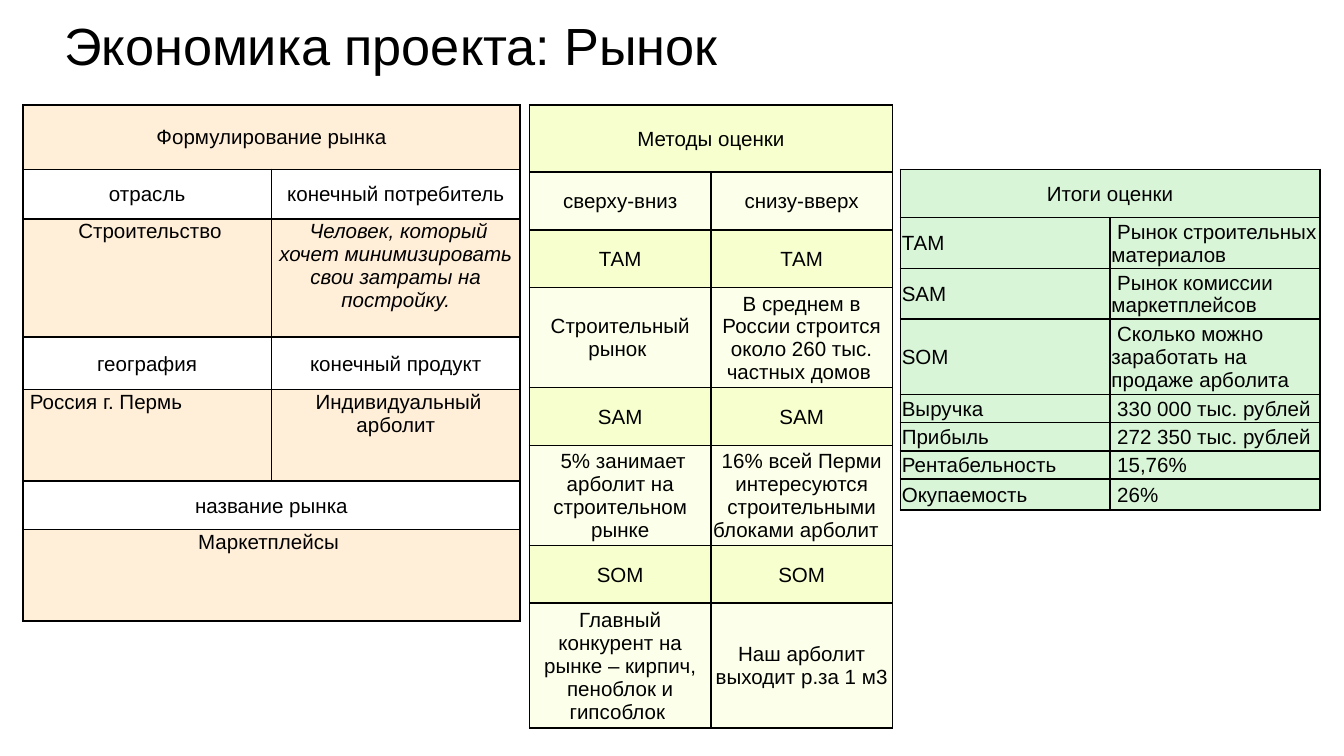
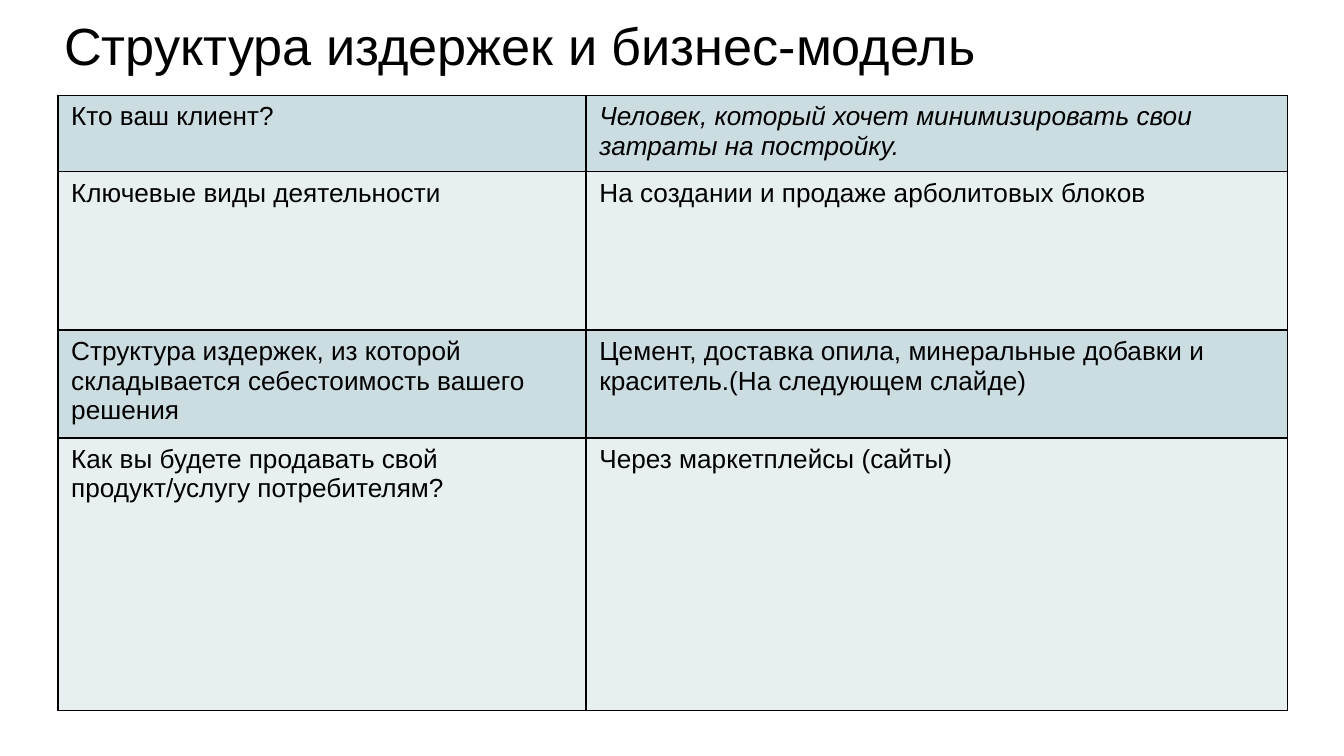
from dataclasses import dataclass
from typing import NamedTuple

from lxml.etree import SubElement
from pptx import Presentation
from pptx.dml.color import RGBColor
from pptx.enum.text import MSO_ANCHOR, PP_ALIGN
from pptx.oxml.ns import qn
from pptx.util import Inches, Pt

FONT = "Arial"
BLACK = RGBColor(0x00, 0x00, 0x00)
ORANGE = RGBColor(0xFF, 0xAB, 0x40)
GREEN = RGBColor(0x33, 0xCC, 0x33)
LEMON = RGBColor(0xF8, 0xFF, 0xCF)
PALE_LEMON = RGBColor(0xFC, 0xFF, 0xE9)
BLUE_GREY = RGBColor(0xCC, 0xDD, 0xE1)
PALE_BLUE_GREY = RGBColor(0xE7, 0xEF, 0xF1)

SLIDE_WIDTH, SLIDE_HEIGHT = Inches(10), Inches(5.625)
GRID_COLUMNS, GRID_ROWS = 100, 56.25
TITLE_SIZE = 28
BORDER_WIDTH = 1
BORDER_TAGS = ("a:lnL", "a:lnR", "a:lnT", "a:lnB")


class Paint(NamedTuple):
    color: RGBColor
    opacity: int = 100


class Margins(NamedTuple):
    left: float
    top: float
    right: float
    bottom: float


class Entry(NamedTuple):
    text: str
    italic: bool = False
    align: PP_ALIGN | None = None


@dataclass(frozen=True)
class Row:
    """A table row; a single entry spans the whole width."""
    height: float
    entries: tuple[Entry | str, ...]
    paint: Paint | None = None
    anchor: MSO_ANCHOR = MSO_ANCHOR.MIDDLE
    align: PP_ALIGN = PP_ALIGN.CENTER


@dataclass(frozen=True)
class Grid:
    left: float
    top: float
    height: float
    columns: tuple[float, ...]
    rows: tuple[Row, ...]
    text_size: float = 11
    margins: Margins = Margins(0.1, 0.1, 0.1, 0)


@dataclass(frozen=True)
class Page:
    title: str
    grids: tuple[Grid, ...]


PEACH = Paint(ORANGE, 20)
MINT = Paint(GREEN, 19)
CLIENT = "Человек, который хочет минимизировать свои затраты на постройку."


def market_answer(height: float, *entries: Entry | str) -> Row:
    return Row(height, entries, PEACH, MSO_ANCHOR.TOP)


def method_heading(name: str) -> Row:
    return Row(4.3, (name, name), Paint(LEMON))


def method_answer(height: float, *entries: str) -> Row:
    return Row(height, entries, Paint(PALE_LEMON))


def result(height: float, name: str, value: str) -> Row:
    return Row(height, (name, value), MINT, align=PP_ALIGN.LEFT)


def model_row(height: float, color: RGBColor, question: str, answer: Entry | str) -> Row:
    return Row(height, (question, answer), Paint(color), MSO_ANCHOR.TOP, PP_ALIGN.LEFT)


MARKET = Grid(1.7, 7.8, 38.8, (18.5, 18.5), (
    Row(4.8, ("Формулирование рынка",), PEACH),
    Row(3.7, ("отрасль", "конечный потребитель")),
    market_answer(8.8, " Строительство", Entry(" " + CLIENT, italic=True)),
    Row(3.9, ("география", "конечный продукт")),
    market_answer(6.8, Entry(" Россия г. Пермь", align=PP_ALIGN.LEFT),
                  " Индивидуальный арболит"),
    Row(3.6, ("название рынка",)),
    market_answer(6.8, "Маркетплейсы "),
))

METHODS = Grid(39.4, 7.8, 46.2, (13.5, 13.5), (
    Row(5, ("Методы оценки",), Paint(LEMON)),
    method_answer(4.3, "сверху-вниз", "снизу-вверх"),
    method_heading("ТАМ"),
    method_answer(4.3, "Строительный рынок ",
                  "В среднем в России строится около 260 тыс. частных домов "),
    method_heading("SAM"),
    method_answer(4.3, " 5% занимает арболит на строительном рынке",
                  "16% всей Перми интересуются строительными блоками арболит  "),
    method_heading("SOM"),
    method_answer(6.7, "Главный конкурент на рынке – кирпич, пеноблок и гипсоблок ",
                  "Наш арболит выходит р.за 1 м3"),
))

RESULTS = Grid(67, 12.6, 25.3, (15.6, 15.6), (
    Row(3.6, ("Итоги оценки",), MINT),
    result(2.1, "ТАМ", " Рынок строительных материалов"),
    result(2.1, "SAM", " Рынок комиссии маркетплейсов"),
    result(2.2, "SOM", " Сколько можно заработать на продаже арболита"),
    result(2.1, "Выручка", " 330 000 тыс. рублей"),
    result(2.1, "Прибыль", " 272 350 тыс. рублей"),
    result(2.1, "Рентабельность", " 15,76%"),
    result(2.3, "Окупаемость", " 26%"),
))

BUSINESS_MODEL = Grid(4.3, 7.1, 45.8, (39.3, 52.2), (
    model_row(3.3, BLUE_GREY, "Кто ваш клиент?", Entry(CLIENT, italic=True)),
    model_row(11.8, PALE_BLUE_GREY, "Ключевые виды деятельности",
              "На создании и продаже арболитовых блоков"),
    model_row(7.5, BLUE_GREY,
              "Структура издержек, из которой складывается себестоимость вашего решения",
              "Цемент, доставка опила, минеральные добавки и краситель.(На следующем слайде)"),
    model_row(20.3, PALE_BLUE_GREY,
              "Как вы будете продавать свой продукт/услугу потребителям?",
              "Через маркетплейсы (сайты)"),
), text_size=14, margins=Margins(1, 0.5, 1, 0.5))

PAGES = (
    Page("Экономика проекта: Рынок", (MARKET, METHODS, RESULTS)),
    Page("Структура издержек и бизнес-модель", (BUSINESS_MODEL,)),
)


def across(columns: float) -> int:
    return round(SLIDE_WIDTH * columns / GRID_COLUMNS)


def down(rows: float) -> int:
    return round(SLIDE_HEIGHT * rows / GRID_ROWS)


def write(text_frame, text: str, size: float, align: PP_ALIGN, italic: bool = False) -> None:
    text_frame.text = text
    paragraph = text_frame.paragraphs[0]
    paragraph.alignment = align
    for run in paragraph.runs:
        run.font.name = FONT
        run.font.size = Pt(size)
        run.font.italic = italic
        run.font.color.rgb = BLACK


def set_margins(target, margins: Margins) -> None:
    target.margin_left, target.margin_right = across(margins.left), across(margins.right)
    target.margin_top, target.margin_bottom = down(margins.top), down(margins.bottom)


def add_borders(cell) -> None:
    """Outline a cell; must run before the fill, which follows lines in the XML."""
    properties = cell._tc.get_or_add_tcPr()
    for tag in BORDER_TAGS:
        line = SubElement(properties, qn(tag), w=str(Pt(BORDER_WIDTH)))
        solid = SubElement(line, qn("a:solidFill"))
        SubElement(solid, qn("a:srgbClr"), val=str(BLACK))


def paint_cell(cell, paint: Paint | None) -> None:
    if paint is None:
        cell.fill.background()
        return
    cell.fill.solid()
    cell.fill.fore_color.rgb = paint.color
    if paint.opacity < 100:
        color = cell._tc.tcPr.find(qn("a:solidFill")).find(qn("a:srgbClr"))
        SubElement(color, qn("a:alpha"), val=str(paint.opacity * 1000))


def add_title(slide, title: str) -> None:
    shape = slide.shapes.add_textbox(across(3.8), 0, across(93.2), down(6.3))
    shape.text_frame.word_wrap = True
    set_margins(shape.text_frame, Margins(1, 1, 1, 1))
    write(shape.text_frame, title, TITLE_SIZE, PP_ALIGN.LEFT)


def add_grid(slide, grid: Grid) -> None:
    shape = slide.shapes.add_table(
        len(grid.rows), len(grid.columns), across(grid.left), down(grid.top),
        across(sum(grid.columns)), down(grid.height))
    table = shape.table
    table.first_row = table.horz_banding = False
    for column, width in zip(table.columns, grid.columns):
        column.width = across(width)
    for table_row, row in zip(table.rows, grid.rows):
        table_row.height = down(row.height)
        cells = list(table_row.cells)
        for cell in cells:
            add_borders(cell)
            paint_cell(cell, row.paint)
            set_margins(cell, grid.margins)
            cell.vertical_anchor = row.anchor
        if len(row.entries) == 1:
            cells[0].merge(cells[-1])
        for cell, item in zip(cells, row.entries):
            entry = Entry(item) if isinstance(item, str) else item
            align = row.align if entry.align is None else entry.align
            write(cell.text_frame, entry.text, grid.text_size, align, entry.italic)
    shape.height = down(grid.height)


def main() -> None:
    presentation = Presentation()
    presentation.slide_width, presentation.slide_height = SLIDE_WIDTH, SLIDE_HEIGHT
    blank_layout = presentation.slide_layouts[6]
    for page in PAGES:
        slide = presentation.slides.add_slide(blank_layout)
        add_title(slide, page.title)
        for grid in page.grids:
            add_grid(slide, grid)
    presentation.save("out.pptx")


if __name__ == "__main__":
    main()
